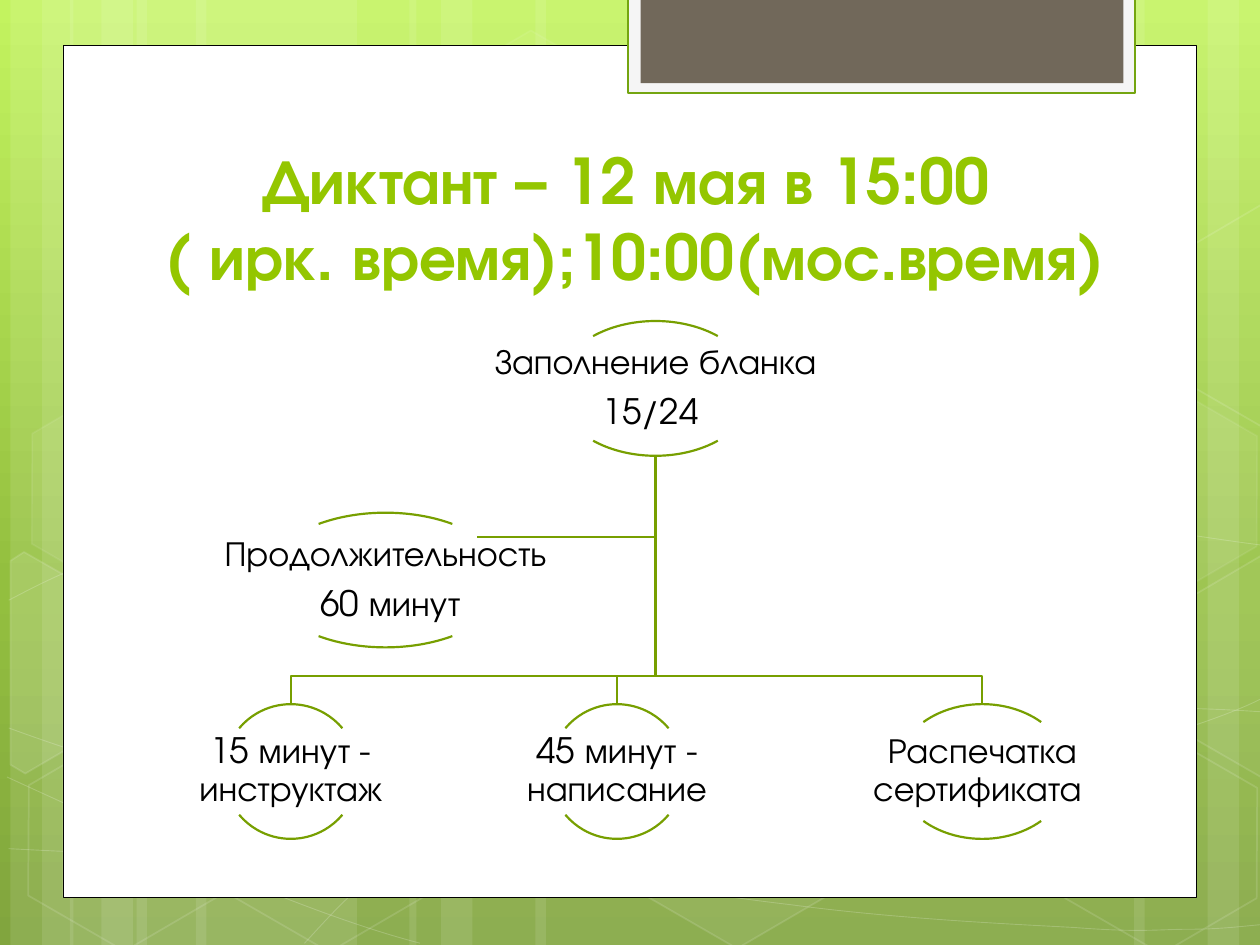
from copy import deepcopy
from dataclasses import dataclass
from math import cos, radians, sin
from typing import NamedTuple

from lxml import etree
from pptx import Presentation
from pptx.dml.color import RGBColor
from pptx.enum.shapes import MSO_SHAPE
from pptx.enum.text import MSO_ANCHOR, PP_ALIGN
from pptx.oxml.ns import qn
from pptx.util import Pt

RECT, HEXAGON, ARC = MSO_SHAPE.RECTANGLE, MSO_SHAPE.HEXAGON, MSO_SHAPE.ARC
CENTER = PP_ALIGN.CENTER
MIDDLE, BOTTOM = MSO_ANCHOR.MIDDLE, MSO_ANCHOR.BOTTOM


@dataclass(frozen=True)
class Theme:
    font: str = "TeX Gyre Adventor"
    title_size: float = 36
    node_size: float = 20
    title: str = "94C600"
    text: str = "000000"
    branch: str = "779F00"
    white: str = "FFFFFF"
    frame: str = "000000"
    tab: str = "F5F5F5"
    tab_line: str = "74A510"
    tab_inner: str = "71685A"
    sky: tuple = ((0, "C3F35F"), (0.62, "93BF3F"), (1, "81A53E"))


class Paint(NamedTuple):
    color: str
    alpha: int = 100
    width: float = 0


class Point(NamedTuple):
    x: float
    y: float


class Box(NamedTuple):
    x: float
    y: float
    w: float
    h: float


class Hexagon(NamedTuple):
    x: float
    y: float
    fill: int
    line: int


class CutHexagon(NamedTuple):
    center: Point
    points: list
    fill: int


class Node(NamedTuple):
    center: float
    top: float
    width: float
    lines: tuple


T = Theme()
BRANCH = Paint(T.branch, width=1.25)
WAVE = Paint(T.white, 20, 0.5)
NODE_H = 77
ROOT = Node(374.6, 183.5, 113, ("Заполнение бланка", "15/24 "))
ASSISTANT = Node(220.3, 293, 138, ("Продолжительность", " 60 минут"))
CHILDREN = [
    Node(166.2, 402.4, 77, ("15 минут - инструктаж",)),
    Node(352.6, 402.4, 77, ("45 минут - написание",)),
    Node(561.3, 402.4, 99, ("Распечатка сертификата ",)),
]
BUS_Y = 386.3
ASSISTANT_JOIN = Point(272.8, 306.8)

TILT = 30
STRIPES = [(6, 1, 126), (40, 1, 126), (726, -1, 126), (234, 1, 222)]
HEXAGONS = [
    Hexagon(240.5, 26, 4, 8), Hexagon(358, 424, 6, 12),
    Hexagon(8, 425.5, 0, 12), Hexagon(10, 224.5, 7, 8),
    Hexagon(125, 426, 0, 12), Hexagon(542, 326, 10, 12),
    Hexagon(600.5, 427, 0, 12), Hexagon(600.5, 226, 7, 8),
]
RIGHT_CUT = [(666.7, 349.2), (720.7, 317.5), (726.5, 321), (726.5, 441.4),
             (721.4, 444.2), (666.7, 412.6)]
CUT_HEXAGONS = [
    CutHexagon(Point(25.9, 385.2), [(6, 320.4), (13.7, 315.4), (69, 347), (68.4, 410.4),
                                    (14.4, 442), (6, 437)], 10),
    CutHexagon(Point(709.2, 374.4), RIGHT_CUT, 4),
    CutHexagon(Point(709.2, 173.9), [(x, y - 200.5) for x, y in RIGHT_CUT], 0),
]
WAVES = [
    [(5, 485), (44, 487), (83, 489), (137, 488), (191, 487), (258, 486), (330, 479),
     (402, 472), (504, 458), (570, 444), (636, 431), (703, 410), (725, 397)],
    [(5, 343), (26, 332), (47, 321), (87, 310), (128, 300), (187, 284), (250, 279),
     (314, 274), (392, 273), (471, 279), (550, 284), (682, 307), (725, 312)],
    [(4, 444), (91, 484), (178, 523), (240, 539)],
    [(5, 416), (27, 424), (50, 432), (92, 444), (134, 454), (197, 472), (257, 485),
     (317, 497), (392, 510), (452, 517), (512, 525), (576, 528), (614, 530),
     (652, 533), (662, 531), (680, 531), (699, 531), (712, 529), (725, 528)],
    [(174, 539), (187, 525), (200, 510), (217, 498), (235, 485), (259, 470), (279, 460),
     (300, 450), (312, 446), (338, 438), (364, 431), (413, 421), (438, 416),
     (464, 411), (467, 411), (490, 410), (512, 408), (547, 405), (572, 405),
     (597, 404), (638, 405), (638, 405), (667, 404), (696, 405), (724, 407)],
]


def paint_fill(fill, paint: Paint | None) -> None:
    if paint is None:
        fill.background()
        return
    fill.solid()
    fill.fore_color.rgb = RGBColor.from_string(paint.color)


def style(sp, fill: Paint | None = None, line: Paint | None = None) -> None:
    sp.shadow.inherit = False
    paint_fill(sp.fill, fill)
    paint_fill(sp.line.fill, line)
    if line:
        sp.line.width = Pt(line.width)
    props = sp.element.spPr
    for paint, parent in ((fill, props), (line, props.find(qn("a:ln")))):
        if paint and paint.alpha < 100:
            color = parent.find(f"{qn('a:solidFill')}/{qn('a:srgbClr')}")
            etree.SubElement(color, qn("a:alpha")).set("val", str(paint.alpha * 1000))


def add_preset(s, kind, box: Box, fill: Paint | None = None, line: Paint | None = None):
    sp = s.shapes.add_shape(kind, *map(Pt, box))
    style(sp, fill, line)
    return sp


def add_path(s, points: list, line: Paint, fill: Paint | None = None, close: bool = False):
    start, *rest = [(Pt(x), Pt(y)) for x, y in points]
    builder = s.shapes.build_freeform(*start)
    builder.add_line_segments(rest, close=close)
    sp = builder.convert_to_shape()
    style(sp, fill, line)
    return sp


def add_wave(s, knots: list) -> None:
    outline = add_path(s, knots, WAVE).element.spPr.find(f".//{qn('a:path')}")
    segments = outline.findall(qn("a:lnTo"))
    for i in range(0, len(segments), 3):
        curve = etree.SubElement(outline, qn("a:cubicBezTo"))
        for segment in segments[i:i + 3]:
            curve.append(segment[0])
            outline.remove(segment)


def add_cut_hexagon(s, h: CutHexagon) -> None:
    c, n = cos(radians(TILT)), sin(radians(TILT))
    offsets = [(x - h.center.x, y - h.center.y) for x, y in h.points]
    level = [(h.center.x + c * x + n * y, h.center.y - n * x + c * y) for x, y in offsets]
    fill = Paint(T.white, h.fill) if h.fill else None
    add_path(s, level, Paint(T.white, 12, 1), fill, close=True).rotation = TILT


def add_text(s, box: Box, lines: tuple, size: float, color: str, anchor, bold: bool = False):
    tf = s.shapes.add_textbox(*map(Pt, box)).text_frame
    tf.word_wrap = True
    tf.vertical_anchor = anchor
    tf.text = "\n".join(lines)
    for p in tf.paragraphs:
        p.alignment = CENTER
        for r in p.runs:
            r.font.name, r.font.size, r.font.bold = T.font, Pt(size), bold
            r.font.color.rgb = RGBColor.from_string(color)
    return tf


def add_node(s, node: Node) -> None:
    box = Box(node.center - node.width / 2, node.top, node.width, NODE_H)
    for angles in ((132, 192), (24, 84)):
        sp = add_preset(s, ARC, box, line=BRANCH)
        sp.adjustments[0], sp.adjustments[1] = angles
    label = Box(node.center - node.width, node.top + 13.7, node.width * 2, 49.5)
    tf = add_text(s, label, node.lines, T.node_size, T.text, MIDDLE)
    tf.margin_left = tf.margin_right = tf.margin_top = tf.margin_bottom = Pt(0.9)
    for p in tf.paragraphs:
        p.line_spacing, p.space_after = 0.9, Pt(7)


def add_background(s) -> None:
    fill = s.background.fill
    fill.gradient()
    fill.gradient_angle = 270
    stops = s.element.find(f".//{qn('a:gsLst')}")
    stops.insert(1, deepcopy(stops[0]))
    for stop, (position, color) in zip(fill.gradient_stops, T.sky):
        stop.position = position
        stop.color.rgb = RGBColor.from_string(color)

    for base, direction, wide in STRIPES:
        for offset, width in ((72, wide), (0, 36), (18, 60)):
            x = base + offset if direction > 0 else base - offset - width
            sp = add_preset(s, RECT, Box(x, 0, width, 540), Paint(T.white, 10))
            sp.rotation = 0 if direction > 0 else 180
    for knots in WAVES:
        add_wave(s, knots)
    for h in HEXAGONS:
        fill = Paint(T.white, h.fill) if h.fill else None
        sp = add_preset(s, HEXAGON, Box(h.x, h.y, 126, 109.5), fill, Paint(T.white, h.line, 1))
        sp.adjustments[0] = 0.285
        sp.rotation = TILT
    for h in CUT_HEXAGONS:
        add_cut_hexagon(s, h)

    add_preset(s, RECT, Box(36, 26, 648, 487), Paint(T.white), Paint(T.frame, width=0.5))
    add_preset(s, RECT, Box(359, -1.5, 289.5, 54.7), Paint(T.tab), Paint(T.tab_line, width=1.25))
    add_preset(s, RECT, Box(366, -1.5, 276, 49), Paint(T.tab_inner))


def add_chart_of_steps(s) -> None:
    trunk = Point(ROOT.center, ROOT.top + NODE_H)
    add_path(s, [trunk, (trunk.x, ASSISTANT_JOIN.y), ASSISTANT_JOIN], BRANCH)
    for child in reversed(CHILDREN):
        add_path(s, [trunk, (trunk.x, BUS_Y), (child.center, BUS_Y), (child.center, child.top)], BRANCH)
    for node in (ROOT, *CHILDREN, ASSISTANT):
        add_node(s, node)


def main() -> None:
    prs = Presentation()
    prs.slide_width, prs.slide_height = Pt(720), Pt(540)
    s = prs.slides.add_slide(prs.slide_layouts[6])
    add_background(s)
    add_text(s, Box(42.5, 81, 641, 90), ("Диктант – 12 мая в 15:00 \v( ирк. время);10:00(мос.время)",),
             T.title_size, T.title, BOTTOM, bold=True)
    add_chart_of_steps(s)
    prs.save("out.pptx")


if __name__ == "__main__":
    main()
